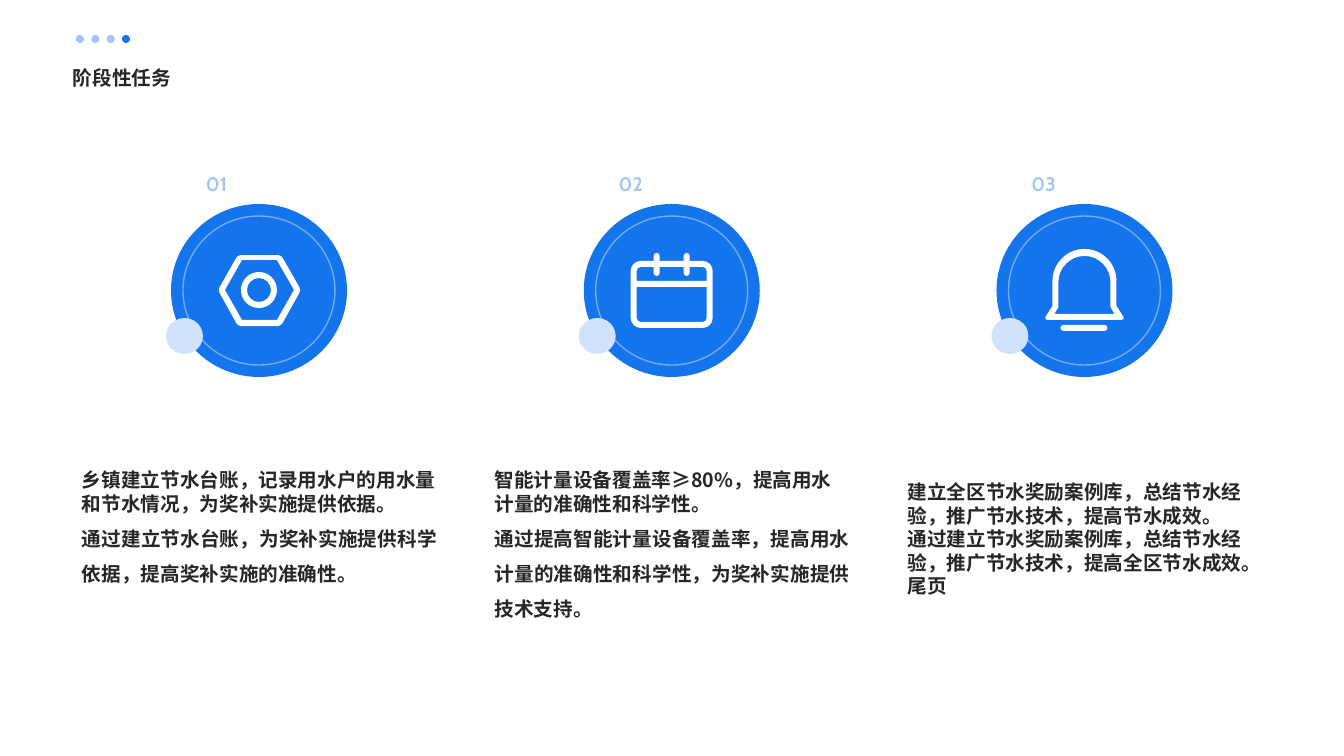
import math

import lxml.etree
import pptx
import pptx.dml.color
import pptx.enum.shapes
import pptx.enum.text
import pptx.oxml.ns
import pptx.util

PX = 914400 / 100.8
BLUE, PALE, RING, BADGE = "1474EC", "A1C7F7", "72ACF4", "D0E3FB"
WHITE, INK = "FFFFFF", "262626"
CJK, LATIN = "Noto Sans CJK SC", "Cabin"
LEFT = pptx.enum.text.PP_ALIGN.LEFT
JUSTIFY = pptx.enum.text.PP_ALIGN.JUSTIFY
TIGHT = (pptx.util.Pt(16.8), LEFT)
LOOSE = (pptx.util.Pt(25), JUSTIFY)

TITLE = "阶段性任务"

# Icon outlines in px of the first column; a third value is a corner radius.
NUT = [
    [(241, 272, 18), (277, 272, 18), (277, 308, 18), (241, 308, 18)],
    [(247, 278, 12), (271, 278, 12), (271, 302, 12), (247, 302, 12)],
    [(242, 260), (277, 260), (294, 290), (277, 320), (242, 320), (225, 290)],
    [(238, 255, 3), (281, 255, 3), (301, 290, 3),
     (281, 326, 3), (238, 326, 3), (218, 290, 3)],
]
CALENDAR = [
    [(224, 287), (294, 287), (294, 322, 4), (224, 322, 4)],
    [(224, 281), (224, 267, 4), (241, 267), (241, 276, 3), (247, 276, 3),
     (247, 267), (271, 267), (271, 276, 3), (277, 276, 3), (277, 267),
     (294, 267, 4), (294, 281)],
    [(218, 261, 10), (241, 261), (241, 253, 3), (247, 253, 3), (247, 261),
     (271, 261), (271, 253, 3), (277, 253, 3), (277, 261),
     (300, 261, 10), (300, 328, 10), (218, 328, 10)],
]
BELL = [
    [(235, 325, 3), (282, 325, 3), (282, 331, 3), (235, 331, 3)],
    [(233, 256, 26), (285, 256, 26), (285, 307), (289, 314), (229, 314), (233, 307)],
    [(227, 249, 32), (291, 249, 32), (291, 306), (300, 320, 4), (218, 320, 4),
     (227, 306)],
]

# Number, icon, top of the text, paragraphs with their line spacing and alignment
TASKS = [
    ("01", NUT, 468, [
        ("乡镇建立节水台账，记录用水户的用水量和节水情况，为奖补实施提供依据。", *TIGHT),
        ("通过建立节水台账，为奖补实施提供科学依据，提高奖补实施的准确性。", *LOOSE)]),
    ("02", CALENDAR, 468, [
        ("智能计量设备覆盖率≥80%，提高用水计量的准确性和科学性。", *TIGHT),
        ("通过提高智能计量设备覆盖率，提高用水计量的准确性和科学性，为奖补实施提供技术支持。", *LOOSE)]),
    ("03", BELL, 480, [
        ("建立全区节水奖励案例库，总结节水经验，推广节水技术，提高节水成效。", *TIGHT),
        ("通过建立节水奖励案例库，总结节水经验，推广节水技术，提高全区节水成效。", *TIGHT),
        ("尾页", *TIGHT)]),
]
COLUMN_PITCH = 412.75
DOTS, DOT_PITCH = 4, 15.33


def px(*values):
    return [round(v * PX) for v in values]


def rgb(value):
    return pptx.dml.color.RGBColor.from_string(value)


def paint(sp, fill, line=None):
    sp.shadow.inherit = False
    sp.fill.solid()
    sp.fill.fore_color.rgb = rgb(fill)
    if line:
        sp.line.color.rgb = rgb(line)
        sp.line.width = pptx.util.Pt(1)
    else:
        sp.line.fill.background()


def add_ellipse(shapes, box, fill, line=None):
    sp = shapes.add_shape(pptx.enum.shapes.MSO_SHAPE.OVAL, *px(*box))
    paint(sp, fill, line)
    return sp


def write(sp, paragraphs, font, color, anchor):
    """Fill a text shape with (text, line spacing, alignment) rows."""
    tf = sp.text_frame
    tf.word_wrap = True
    tf.auto_size = pptx.enum.text.MSO_AUTO_SIZE.NONE
    tf.vertical_anchor = anchor
    tf.margin_left = tf.margin_top = tf.margin_right = tf.margin_bottom = 0
    tf.text = "\n".join(text for text, *_ in paragraphs)
    for p, (_, spacing, alignment) in zip(tf.paragraphs, paragraphs):
        p.alignment = alignment
        p.line_spacing = spacing
        p.space_before = p.space_after = pptx.util.Pt(0)
        p._p.get_or_add_pPr().set("hangingPunct", "0")
        for r in p.runs:
            r.font.size = pptx.util.Pt(14)
            r.font.bold = True
            r.font.name = font
            r.font.color.rgb = rgb(color)
            ea = lxml.etree.SubElement(r.font._element, pptx.oxml.ns.qn("a:ea"))
            ea.set("typeface", font)


def trace(corners):
    """Return the outline's points and, for each, whether it opens a curve."""
    points = []
    for i, (x, y, *radius) in enumerate(corners):
        if not radius:
            points.append((x, y, False))
            continue
        ends = []
        for nx, ny, *_ in (corners[i - 1], corners[(i + 1) % len(corners)]):
            k = radius[0] / math.hypot(nx - x, ny - y)
            ends.append(((nx - x) * k, (ny - y) * k))
        (ax, ay), (bx, by) = ends
        points += [(x + ax, y + ay, False),
                   (x + ax * 0.45, y + ay * 0.45, True),
                   (x + bx * 0.45, y + by * 0.45, False),
                   (x + bx, y + by, False)]
    return points


def add_icon(shapes, outlines, dx):
    builder, opens_curve = None, []
    for outline in outlines:
        traced = trace(outline)
        points = [px(x + dx, y) for x, y, _ in traced]
        opens_curve += [flag for *_, flag in traced[1:]]
        if builder is None:
            builder = shapes.build_freeform(*points[0], scale=1.0)
        else:
            builder.move_to(*points[0])
        builder.add_line_segments(points[1:], close=True)
    sp = builder.convert_to_shape()
    paint(sp, WHITE)
    lines = list(sp._element.iter(pptx.oxml.ns.qn("a:lnTo")))
    for i, flag in enumerate(opens_curve):
        if flag:
            curve = lxml.etree.Element(pptx.oxml.ns.qn("a:cubicBezTo"))
            lines[i].addprevious(curve)
            for line in lines[i:i + 3]:
                curve.append(line[0])
                line.getparent().remove(line)


def add_task(shapes, dx, number, icon, top, paragraphs):
    anchors = pptx.enum.text.MSO_ANCHOR
    write(shapes.add_textbox(*px(206 + dx, 145, 107, 70)), [(number, 1.3, JUSTIFY)],
          LATIN, PALE, anchors.MIDDLE)
    add_ellipse(shapes, (171 + dx, 204, 176, 173), BLUE)
    add_ellipse(shapes, (183 + dx, 216, 152, 149), BLUE, RING)
    add_icon(shapes, icon, dx)
    add_ellipse(shapes, (166 + dx, 318, 37, 36), BADGE)
    write(shapes.add_textbox(*px(82 + dx, top, 355, 185)), paragraphs,
          CJK, INK, anchors.TOP)


def main():
    prs = pptx.Presentation()
    prs.slide_width, prs.slide_height = px(1344, 756)
    s = prs.slides.add_slide(prs.slide_layouts[5])

    title = s.shapes.title
    title.left, title.top, title.width, title.height = px(73, 51, 1198, 51)
    write(title, [(TITLE, 1.1, JUSTIFY)], CJK, INK,
          pptx.enum.text.MSO_ANCHOR.MIDDLE)

    for i, task in enumerate(TASKS):
        add_task(s.shapes, i * COLUMN_PITCH, *task)

    dots = s.shapes.add_group_shape()
    for i in range(DOTS):
        sp = add_ellipse(dots.shapes, (76 + i * DOT_PITCH, 35, 8, 8), BLUE)
        if i < DOTS - 1:
            color = sp.fill._xPr.find(".//" + pptx.oxml.ns.qn("a:srgbClr"))
            lxml.etree.SubElement(color, pptx.oxml.ns.qn("a:alpha")).set("val", "40000")

    prs.save("out.pptx")


if __name__ == "__main__":
    main()
